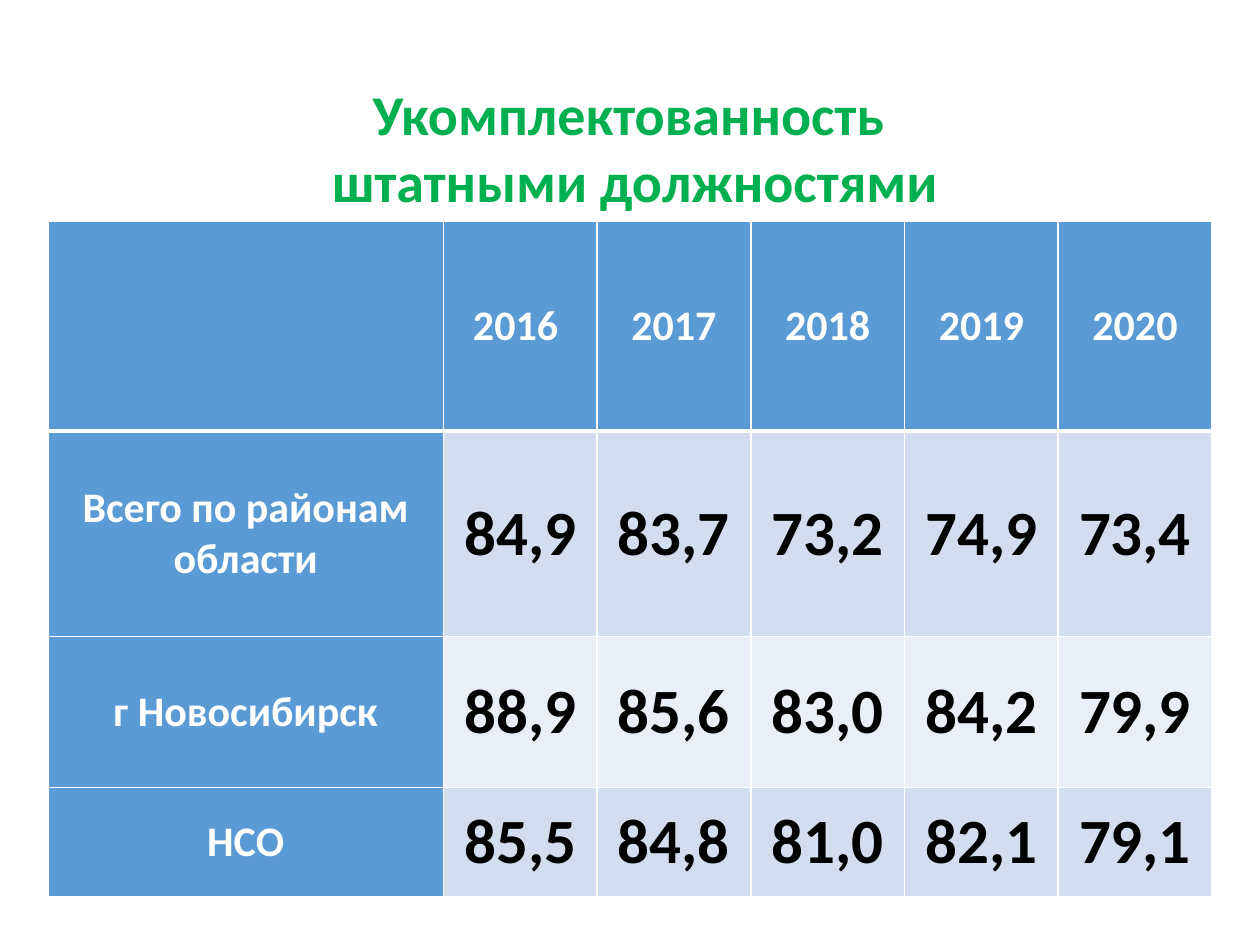
from lxml import etree
from pptx import Presentation
from pptx import util as u
from pptx.dml.color import RGBColor
from pptx.enum import text
from pptx.oxml import ns

GREEN = RGBColor(0x00, 0xB0, 0x50)
BLUE = RGBColor(0x5B, 0x9B, 0xD5)
BAND_DARK = RGBColor(0xD2, 0xDE, 0xEF)
BAND_LIGHT = RGBColor(0xEA, 0xEF, 0xF7)
WHITE = RGBColor(0xFF, 0xFF, 0xFF)
BLACK = RGBColor(0x00, 0x00, 0x00)

TITLE = "Укомплектованность \nштатными должностями"
STAFFING = [
    ["", "2016 ", "2017", "2018", "2019", "2020"],
    ["Всего по районам области", "84,9", "83,7", "73,2", "74,9", "73,4"],
    ["г Новосибирск", "88,9", "85,6", "83,0", "84,2", "79,9"],
    ["НСО", "85,5", "84,8", "81,0", "82,1", "79,1"],
]
COLUMN_WIDTHS = [3.14] + [1.22] * 5
ROW_HEIGHTS = [1.66, 1.63, 1.2, 0.87]


class SlideBuilder:
    font_name = "Calibri"

    def __init__(self, slide):
        self.slide = slide

    def set_text(self, frame, content, size, color):
        frame.text = content
        for paragraph in frame.paragraphs:
            paragraph.alignment = text.PP_ALIGN.CENTER
            for run in paragraph.runs:
                run.font.name = self.font_name
                run.font.size = u.Pt(size)
                run.font.bold = True
                run.font.color.rgb = color

    def title(self, content, left, top, width, height):
        box = self.slide.shapes.add_textbox(*map(u.Inches, (left, top, width, height)))
        box.text_frame.word_wrap = True
        box.text_frame.auto_size = text.MSO_AUTO_SIZE.SHAPE_TO_FIT_TEXT
        self.set_text(box.text_frame, content, 32, GREEN)

    def borders(self, cell, top, bottom):
        properties = cell._tc.get_or_add_tcPr()
        for side, points in (("L", 1), ("R", 1), ("T", top), ("B", bottom)):
            line = etree.SubElement(properties, ns.qn(f"a:ln{side}"), w=str(u.Pt(points)))
            fill = etree.SubElement(line, ns.qn("a:solidFill"))
            etree.SubElement(fill, ns.qn("a:srgbClr"), val=str(WHITE))

    def cell(self, cell, content, row, column):
        is_label = row == 0 or column == 0
        cell.vertical_anchor = text.MSO_ANCHOR.MIDDLE
        cell.margin_left = cell.margin_right = u.Inches(0.07)
        cell.margin_top = cell.margin_bottom = 0
        self.set_text(cell.text_frame, content, 24 if is_label else 36,
                      WHITE if is_label else BLACK)
        # A thick rule separates the header from the data
        self.borders(cell, top=3 if row == 1 else 1, bottom=3 if row == 0 else 1)
        cell.fill.solid()
        band = BAND_DARK if row % 2 else BAND_LIGHT
        cell.fill.fore_color.rgb = BLUE if is_label else band

    def table(self, rows, left, top, widths, heights):
        size = (left, top, sum(widths), sum(heights))
        table = self.slide.shapes.add_table(
            len(rows), len(widths), *map(u.Inches, size)).table
        for column, width in zip(table.columns, widths):
            column.width = u.Inches(width)
        for row, height in zip(table.rows, heights):
            row.height = u.Inches(height)
        for i, values in enumerate(rows):
            for j, value in enumerate(values):
                self.cell(table.cell(i, j), value, i, j)


def main():
    deck = Presentation()
    deck.slide_width, deck.slide_height = u.Inches(10), u.Inches(7.5)
    builder = SlideBuilder(deck.slides.add_slide(deck.slide_layouts[6]))

    # Heading
    builder.title(TITLE, 0.38, 0.58, 9.32, 1.18)

    # Staffing levels by area and year
    builder.table(STAFFING, 0.38, 1.76, COLUMN_WIDTHS, ROW_HEIGHTS)

    deck.save("out.pptx")


if __name__ == "__main__":
    main()
